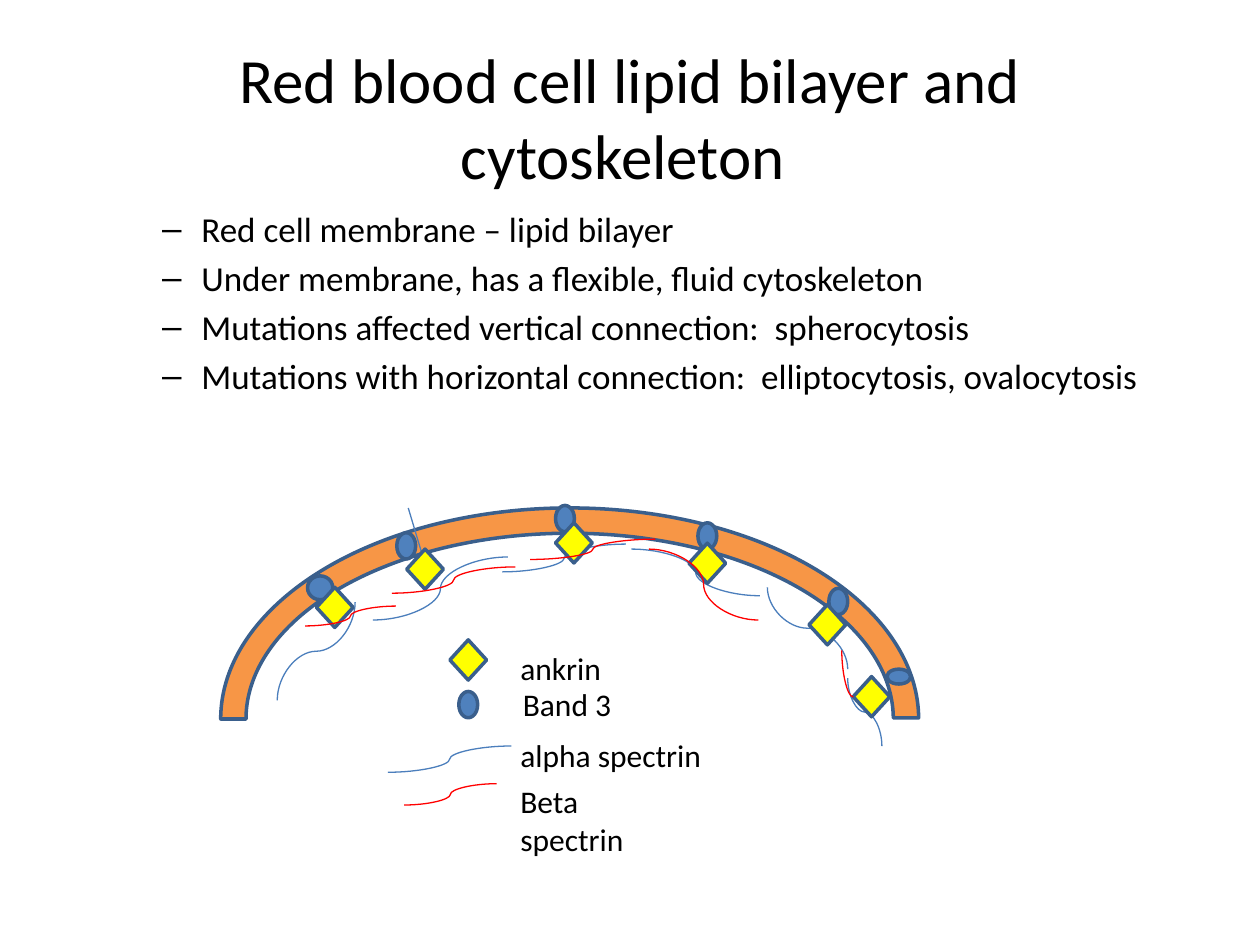
"""Build the slide on the red cell membrane and its cytoskeleton."""
import pptx
import pptx.dml.color
import pptx.enum.shapes
import pptx.enum.text
import pptx.oxml.ns
import pptx.util
from lxml import etree

Cm, Pt = pptx.util.Cm, pptx.util.Pt
RGB = pptx.dml.color.RGBColor
KIND = pptx.enum.shapes.MSO_SHAPE
LINK = pptx.enum.shapes.MSO_CONNECTOR
ALIGN = pptx.enum.text.PP_ALIGN
ANCHOR = pptx.enum.text.MSO_ANCHOR
qn = pptx.oxml.ns.qn

BLACK = RGB(0x00, 0x00, 0x00)
ORANGE = RGB(0xF7, 0x96, 0x46)
BLUE = RGB(0x4F, 0x81, 0xBD)
YELLOW = RGB(0xFF, 0xFF, 0x00)
EDGE = RGB(0x3A, 0x5F, 0x8C)
ALPHA = RGB(0x4B, 0x7E, 0xBC)
BETA = RGB(0xFF, 0x00, 0x00)

TITLE = "Red blood cell lipid bilayer and cytoskeleton "
POINTS = [
    "Red cell membrane – lipid bilayer",
    "Under membrane, has a flexible, fluid cytoskeleton",
    "Mutations affected vertical connection:  spherocytosis",
    "Mutations with horizontal connection:  elliptocytosis, ovalocytosis",
]
LEGEND = [
    ("ankrin", 10.24, 12.95, 2.77, 1.02),
    ("Band 3", 10.29, 13.69, 3.25, 1.02),
    ("alpha spectrin", 10.24, 14.71, 4.57, 1.02),
    ("Beta spectrin", 10.24, 15.65, 3.23, 1.8),
]
ARC = (4.45, 10.24, 14.07, 8.51)
BANDS = [(16.71, 11.86), (14.07, 10.54), (11.2, 10.19), (8, 10.74), (9.25, 13.94)]
ODD_BANDS = [(6.2, 11.61, 0.51, 0.48), (17.88, 13.49, 0.48, 0.3)]
ANKRINS = [
    (6.38, 11.84), (9.07, 12.9), (13.89, 10.95), (11.2, 10.54),
    (8.2, 11.07), (17.2, 13.64), (16.31, 12.19),
]
ALPHAS = [
    (10.13, 11.53, 12.62, 10.97), (12.73, 11.07, 15.32, 12.01),
    (7.52, 12.5, 10.24, 11.23), (7.82, 15.57, 10.31, 15.04),
]
UPRIGHT = [
    (5.59, 14.12, 7.16, 12.14), (15.47, 11.84, 17.09, 13.49),
    (17.78, 15.04, 17.09, 13.67),
]
BETAS = [
    (8.15, 16.23, 10.01, 15.8), (10.69, 11.28, 13.21, 10.87),
    (7.9, 11.96, 10.39, 11.43), (6.15, 12.62, 7.98, 12.22),
    (13.08, 11.07, 15.29, 12.5),
]
HOOK = (16.97, 13.11, 17.2, 14.05)
STALK = (8.61, 11.51, 8.23, 10.24)

deck = pptx.Presentation()
deck.slide_width, deck.slide_height = Cm(25.4), Cm(19.05)
slide = deck.slides.add_slide(deck.slide_layouts[6])


def write(lines, box, size):
    frame = slide.shapes.add_textbox(*map(Cm, box)).text_frame
    frame.word_wrap = True
    frame.text = "\n".join(lines)
    for para in frame.paragraphs:
        for run in para.runs:
            run.font.name, run.font.size = "Calibri", Pt(size)
            run.font.color.rgb = BLACK
    return frame


def draw(kind, box, fill):
    shape = slide.shapes.add_shape(kind, *map(Cm, box))
    shape.shadow.inherit = False
    shape.fill.solid()
    shape.fill.fore_color.rgb = fill
    shape.line.color.rgb, shape.line.width = EDGE, Pt(2)
    return shape


def join(ends, color, kind=LINK.CURVE):
    line = slide.shapes.add_connector(kind, *map(Cm, ends))
    line.line.color.rgb, line.line.width = color, Pt(0.75)
    etree.SubElement(line._element.spPr, qn("a:effectLst"))
    return line


def turn(ends, color):
    x1, y1, x2, y2 = ends
    midx, midy = (x1 + x2) / 2, (y1 + y2) / 2
    dx, dy = (y2 - y1) / 2, (x1 - x2) / 2
    line = join((midx - dx, midy - dy, midx + dx, midy + dy), color)
    line._element.spPr.find(qn("a:xfrm")).set("rot", "5400000")
    return line


head = write([TITLE], (1.27, 0.76, 22.86, 3.18), 36)
head.vertical_anchor = ANCHOR.MIDDLE
head.paragraphs[0].alignment = ALIGN.CENTER

body = write(POINTS, (1.75, 4.06, 21.9, 9.07), 20)
for num, para in enumerate(body.paragraphs):
    props = para._p.get_or_add_pPr()
    props.set("marL", str(Cm(2.06)))
    props.set("indent", str(Cm(-0.79)))
    etree.SubElement(props, qn("a:buFont")).set("typeface", "Arial")
    etree.SubElement(props, qn("a:buChar")).set("char", "–")
    if num:
        para.space_before = Pt(4)

arc = draw(KIND.BLOCK_ARC, ARC, ORANGE)
for num, value in enumerate((108, 215.89, 0.06)):
    arc.adjustments[num] = value

for ends in ALPHAS:
    join(ends, ALPHA)
for ends in UPRIGHT:
    turn(ends, ALPHA)
join(STALK, ALPHA, LINK.STRAIGHT)

for box in [(x, y, 0.38, 0.53) for x, y in BANDS] + ODD_BANDS:
    draw(KIND.OVAL, box, BLUE)
for x, y in ANKRINS:
    draw(KIND.DIAMOND, (x, y, 0.74, 0.81), YELLOW)

for ends in BETAS:
    join(ends, BETA)
hook = turn(HOOK, BETA)
hook._element.spPr.find(qn("a:prstGeom")).set("prst", "curvedConnector2")

for label, *box in LEGEND:
    write([label], box, 18)

deck.save("out.pptx")
